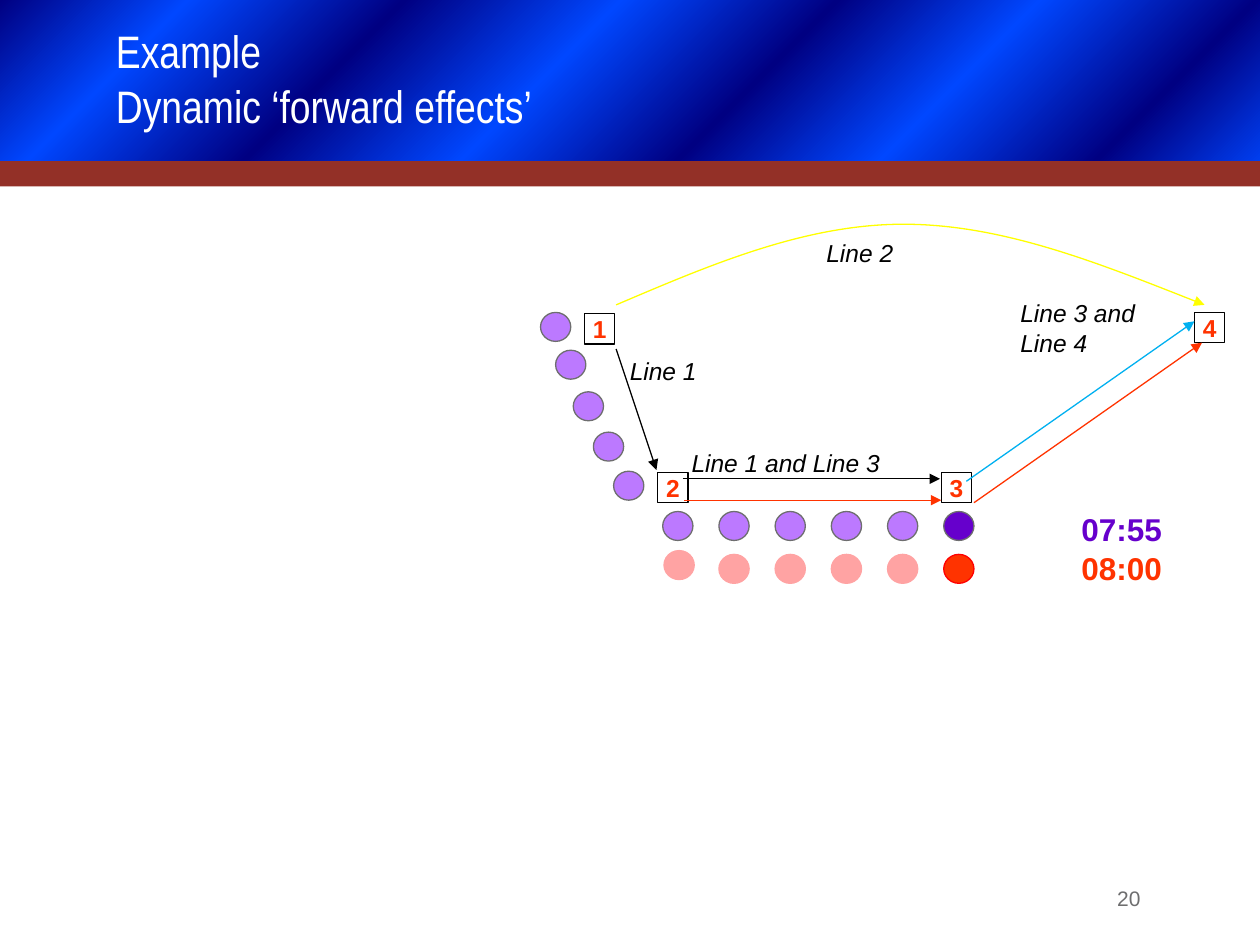
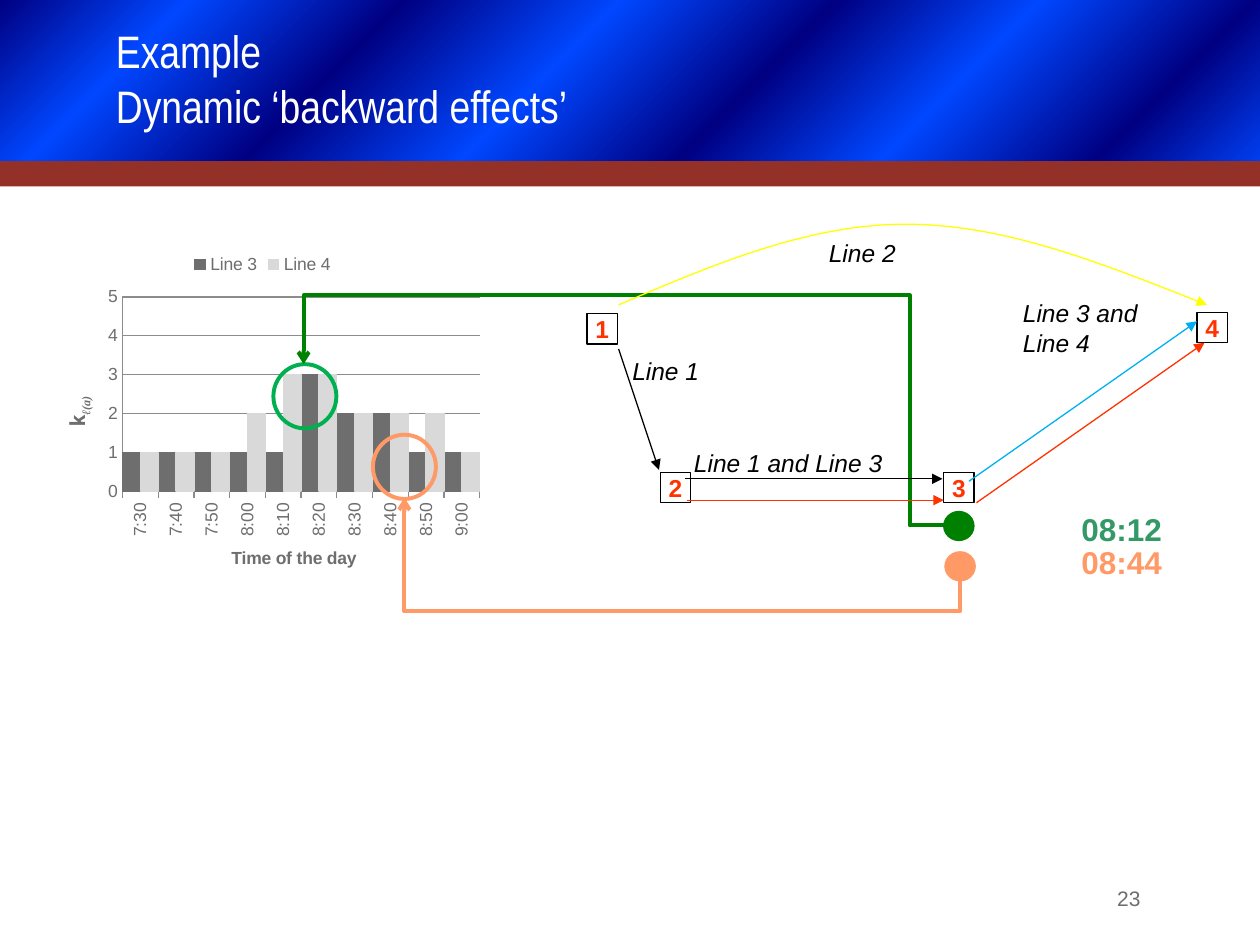
"""Build two slides on dynamic effects in a small transit network."""
from lxml.etree import SubElement
from pptx import Presentation
from pptx.chart.data import CategoryChartData
from pptx.dml.color import RGBColor
from pptx.enum.chart import XL_CHART_TYPE, XL_LEGEND_POSITION, XL_TICK_MARK
from pptx.enum.shapes import MSO_CONNECTOR, MSO_SHAPE
from pptx.enum.text import MSO_ANCHOR, PP_ALIGN
from pptx.oxml.ns import qn
from pptx.util import Inches, Pt

BLACK = RGBColor(0, 0, 0)
WHITE = RGBColor(255, 255, 255)
NAVY = RGBColor(0, 0, 0x82)
BLUE = RGBColor(0, 0x47, 0xFF)
BRICK = RGBColor(0x93, 0x30, 0x27)
GREY = RGBColor(0x6E, 0x6E, 0x6F)
PALE = RGBColor(0xD9, 0xD9, 0xD9)
RULE = RGBColor(0x8C, 0x8C, 0x8C)
LILAC = RGBColor(0xBC, 0x79, 0xFF)
VIOLET = RGBColor(0x66, 0, 0xCC)
PINK = RGBColor(0xFF, 0xA3, 0xA3)
RED = RGBColor(0xFF, 0, 0)
FLAME = RGBColor(0xFF, 0x33, 0)
SKY = RGBColor(0, 0xB0, 0xF0)
YELLOW = RGBColor(0xFF, 0xFF, 0)
GREEN = RGBColor(0, 0x80, 0)
LEAF = RGBColor(0, 0xB0, 0x50)
SEA = RGBColor(0x33, 0x99, 0x66)
PEACH = RGBColor(0xFF, 0x99, 0x66)

CELL = Inches(0.1)
WIDE, HIGH = 100, 75
DOT = (2.4, 2.3)
NODE = (2.4, 2.4)
THIN, THICK = 0.75, 2.25

TITLE = {"name": "Arial Narrow", "size": Pt(26)}
PAGE = {"name": "Arial", "size": Pt(12)}
CLOCK = {"name": "Arial", "size": Pt(18), "bold": True}
LABEL = {"name": "Arial", "size": Pt(14), "italic": True}
MARK = {"name": "Arial", "size": Pt(14), "bold": True}
AXIS = {"name": "Arial", "size": Pt(10)}
HEAD = {"name": "Arial", "size": Pt(10), "bold": True}
SIGN = {"name": "Roboto", "size": Pt(12), "bold": True}
SUB = {"name": "Times New Roman", "size": Pt(12), "bold": True, "italic": True}

STOPS = (0, 13, 28, 43, 58, 72, 87, 100)
NODES = [("1", 46.4, 24.9), ("2", 52.2, 37.5), ("3", 74.7, 37.5), ("4", 94.8, 24.8)]
LINKS = [
    ((54.2, 38), (74.6, 38), BLACK),
    ((76.7, 38.2), (94.8, 25.5), SKY),
    ((48.9, 27.7), (52.1, 37.3), BLACK),
    ((54.3, 39.7), (74.7, 39.7), FLAME),
    ((77.3, 39.9), (95.4, 27.2), FLAME),
]
ARC = [(48.9, 24.2), (56.4, 21), (63.9, 17.8), (71.7, 17.8),
       (79.5, 17.8), (87.5, 21), (95.6, 24.2)]
NAMES = [
    ("Line 1", (49, 27.8, 14.4, 3.4)),
    ("Line 1 and Line 3", (53.9, 35.1, 20, 3.4)),
    ("Line 3 and Line 4", (80, 23.2, 12.4, 5.7)),
    ("Line 2", (64.6, 18.4, 10.1, 3.4)),
]
SLOPE = [(42.9, 24.8), (44.1, 27.8), (45.5, 31.1), (47.1, 34.3), (48.7, 37.4)]
ROW = [52.6 + 4.46 * n for n in range(6)]

TIMES = ["7:30", "7:40", "7:50", "8:00", "8:10", "8:20", "8:30", "8:40", "8:50", "9:00"]
LOADS = [
    ("Line 3", (1, 1, 1, 1, 1, 3, 2, 2, 1, 1), GREY),
    ("Line 4", (1, 1, 1, 2, 3, 3, 2, 2, 2, 1), PALE),
]
PLOT = {"x": 0.19, "y": 0.16, "w": 0.79, "h": 0.55}


def grid(*cells):
    return [round(c * CELL) for c in cells]


def style(font, form, tint):
    for key, val in form.items():
        setattr(font, key, val)
    font.color.rgb = tint


def write(shape, text, form, tint, align=PP_ALIGN.LEFT):
    frame = shape.text_frame
    frame.word_wrap = True
    for n, row in enumerate(text.split("\n")):
        para = frame.add_paragraph() if n else frame.paragraphs[0]
        para.alignment = align
        run = para.add_run()
        run.text = row
        style(run.font, form, tint)
    return frame


def note(host, box, *rest):
    return write(host.add_textbox(*grid(*box)), *rest)


def inset(frame, anchor):
    for side in ("left", "right", "top", "bottom"):
        setattr(frame, "margin_" + side, 0)
    frame.vertical_anchor = anchor


def draw(host, kind, box, fill=None, line=None, width=THIN):
    shape = host.add_shape(kind, *grid(*box))
    shape.shadow.inherit = False
    for part, tint in ((shape.fill, fill), (shape.line.fill, line)):
        if tint is None:
            part.background()
        else:
            part.solid()
            part.fore_color.rgb = tint
    if line is not None:
        shape.line.width = Pt(width)
    return shape


def tip(shape, tint, width=THIN, head="triangle"):
    shape.line.color.rgb = tint
    shape.line.width = Pt(width)
    SubElement(shape.line._get_or_add_ln(), qn("a:tailEnd"), type=head)


def link(host, kind, start, end):
    wire = host.add_connector(kind, *grid(*start, *end))
    SubElement(wire._element.spPr, qn("a:effectLst"))
    return wire


def elbow(host, start, end, tint, bends, turn=0):
    wire = link(host, MSO_CONNECTOR.ELBOW, start, end)
    props = wire._element.spPr
    geom = props.find(qn("a:prstGeom"))
    geom.set("prst", f"bentConnector{len(bends) + 2}")
    guides = geom.find(qn("a:avLst"))
    if guides is None:
        guides = SubElement(geom, qn("a:avLst"))
    for n, bend in enumerate(bends, 1):
        SubElement(guides, qn("a:gd"), name=f"adj{n}", fmla=f"val {round(bend * 1000)}")
    if turn:
        props.find(qn("a:xfrm")).set("rot", str(turn * 60000))
    tip(wire, tint, THICK, "arrow")


def curve(host, spots):
    pen = host.build_freeform(*grid(*spots[0]))
    pen.add_line_segments([grid(*s) for s in spots[1:]], close=False)
    shape = pen.convert_to_shape()
    shape.shadow.inherit = False
    shape.fill.background()
    tip(shape, YELLOW)
    track = shape._element.spPr.find(".//" + qn("a:path"))
    steps = track.findall(qn("a:lnTo"))
    for n in range(0, len(steps), 3):
        bend = SubElement(track, qn("a:cubicBezTo"))
        for step in steps[n:n + 3]:
            bend.append(step[0])
            track.remove(step)


def base(deck, title, page):
    host = deck.slides.add_slide(deck.slide_layouts[6]).shapes
    band = draw(host, MSO_SHAPE.RECTANGLE, (0, 0, WIDE, 14.7))
    band.fill.gradient()
    blend = band._element.spPr.find(qn("a:gradFill"))
    blend.find(qn("a:lin")).set("ang", str(45 * 60000))
    stops = blend.find(qn("a:gsLst"))
    for old in list(stops):
        stops.remove(old)
    for n, spot in enumerate(STOPS):
        stop = SubElement(stops, qn("a:gs"), pos=str(spot * 1000))
        SubElement(stop, qn("a:srgbClr"), val=str((NAVY, BLUE)[n % 2]))
    draw(host, MSO_SHAPE.RECTANGLE, (0, 12.8, WIDE, 2), BRICK)
    inset(note(host, (9.2, 2, 81.8, 8.5), title, TITLE, WHITE), MSO_ANCHOR.BOTTOM)
    note(host, (68.2, HIGH - 5.2, 23.3, 3.7), page, PAGE, GREY, PP_ALIGN.RIGHT)
    return host


def network(host, shift=0):
    group = host.add_group_shape()
    net = group.shapes
    for text, x, y in NODES:
        node = draw(net, MSO_SHAPE.RECTANGLE, (x, y, *NODE), WHITE, BLACK)
        inset(write(node, text, MARK, FLAME, PP_ALIGN.CENTER), MSO_ANCHOR.MIDDLE)
    for start, end, tint in LINKS:
        tip(link(net, MSO_CONNECTOR.STRAIGHT, start, end), tint)
    curve(net, ARC)
    for text, box in NAMES:
        note(net, box, text, LABEL, BLACK)
    group.left += round(shift * CELL)


def dot(host, x, y, fill, line):
    draw(host, MSO_SHAPE.OVAL, (x, y, *DOT), fill, line)


def clock(host, y, text, tint):
    note(host, (75.3, y, 17.9, 4), text, CLOCK, tint, PP_ALIGN.RIGHT)


def loads(host):
    data = CategoryChartData()
    data.categories = TIMES
    for name, vals, _ in LOADS:
        data.add_series(name, vals)
    chart = host.add_chart(XL_CHART_TYPE.COLUMN_CLUSTERED,
                           *grid(2.9, 19.1, 35.9, 28), data).chart
    style(chart.font, AXIS, GREY)
    chart.has_title = False
    chart.has_legend = True
    chart.legend.position = XL_LEGEND_POSITION.TOP
    chart.legend.include_in_layout = False
    plot = chart.plots[0]
    plot.gap_width = plot.overlap = 0
    plot.vary_by_categories = False
    for bars, (_, _, tint) in zip(plot.series, LOADS):
        bars.format.fill.solid()
        bars.format.fill.fore_color.rgb = tint
        bars.format.line.color.rgb = tint
        bars.format.line.width = Pt(THIN)
    cat, val = chart.category_axis, chart.value_axis
    forms = {
        cat: {"major_tick_mark": XL_TICK_MARK.OUTSIDE, "has_major_gridlines": False},
        val: {"major_tick_mark": XL_TICK_MARK.NONE, "has_major_gridlines": True,
              "minimum_scale": 0, "maximum_scale": 5, "major_unit": 1},
    }
    heads = {cat: [("Time of the day", HEAD)], val: [("k", SIGN), ("ℓ(a)", SUB)]}
    for axis, form in forms.items():
        for key, item in form.items():
            setattr(axis, key, item)
        style(axis.tick_labels.font, AXIS, GREY)
        axis.format.line.color.rgb = RULE
        para = axis.axis_title.text_frame.paragraphs[0]
        for text, face in heads[axis]:
            run = para.add_run()
            run.text = text
            style(run.font, face, GREY)
    run.font._element.set("baseline", "-25000")
    val.major_gridlines.format.line.color.rgb = RULE
    turn = cat._element.find(qn("c:txPr")).find(qn("a:bodyPr"))
    for key, item in {"rot": "-5400000", "vert": "horz"}.items():
        turn.set(key, item)
    area = chart._chartSpace.find(".//" + qn("c:plotArea"))
    old = area.find(qn("c:layout"))
    if old is not None:
        area.remove(old)
    place = SubElement(area, qn("c:layout"))
    area.insert(0, place)
    man = SubElement(place, qn("c:manualLayout"))
    rules = {"layoutTarget": "inner", "xMode": "edge", "yMode": "edge", **PLOT}
    for key, item in rules.items():
        SubElement(man, qn("c:" + key), val=str(item))


def forward(deck):
    host = base(deck, "Example\nDynamic ‘forward effects’", "20")
    for x, y in SLOPE + [(x, 40.6) for x in ROW[:-1]]:
        dot(host, x, y, LILAC, GREY)
    dot(host, ROW[-1], 40.6, VIOLET, GREY)
    for x, y in [(ROW[0] + 0.1, 43.7)] + [(x, 44) for x in ROW[1:-1]]:
        dot(host, x, y, PINK, PINK)
    dot(host, ROW[-1], 44, FLAME, RED)
    clock(host, 40, "07:55", VIOLET)
    clock(host, 43.1, "08:00", FLAME)
    network(host)


def backward(deck):
    host = base(deck, "Example\nDynamic ‘backward effects’", "23")
    loads(host)
    dot(host, 74.9, 40.6, GREEN, GREEN)
    dot(host, 75, 43.8, PEACH, PEACH)
    for x, y, tint in ((21.7, 28.9, LEAF), (29.6, 34.5, PEACH)):
        draw(host, MSO_SHAPE.OVAL, (x, y, 5, 5.1), line=tint, width=THICK)
    clock(host, 40, "08:12", SEA)
    clock(host, 42.6, "08:44", PEACH)
    elbow(host, (57.4, 20.7), (50.9, 64.8), PEACH, [-38.7], 90)
    elbow(host, (74.9, 41.7), (24.1, 28.9), GREEN, [5.3, 142.6])
    network(host, 0.2)


def main():
    deck = Presentation()
    deck.slide_width, deck.slide_height = grid(WIDE, HIGH)
    forward(deck)
    backward(deck)
    deck.save("out.pptx")


if __name__ == "__main__":
    main()
